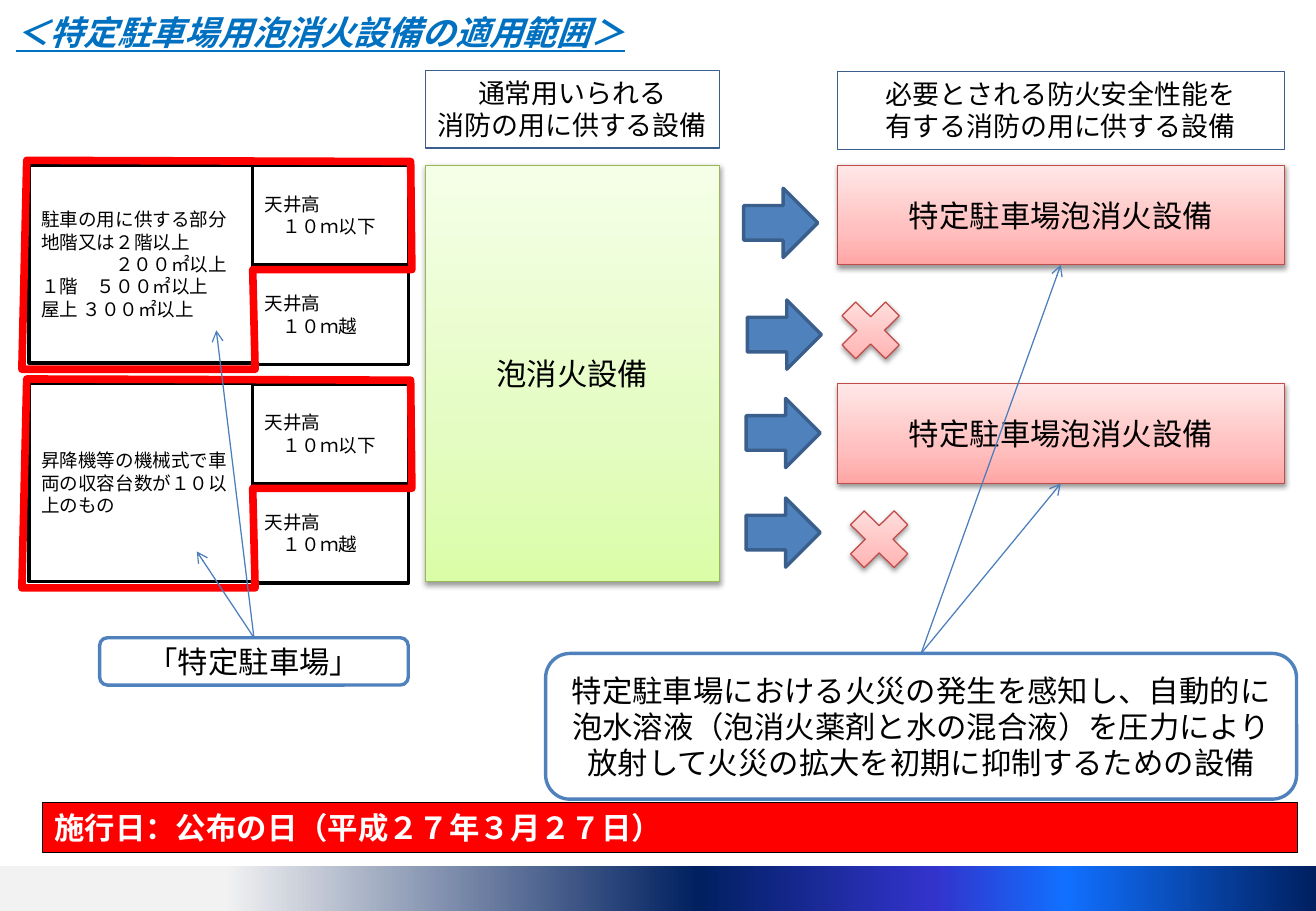
import lxml.etree
import pptx
import pptx.dml.color
import pptx.enum.shapes
import pptx.enum.text
import pptx.oxml.ns
import pptx.util

Inches = pptx.util.Inches
Pt = pptx.util.Pt
RGB = pptx.dml.color.RGBColor
Kind = pptx.enum.shapes.MSO_SHAPE
Align = pptx.enum.text.PP_ALIGN
Anchor = pptx.enum.text.MSO_ANCHOR
qn = pptx.oxml.ns.qn

BLACK = RGB(0, 0, 0)
WHITE = RGB(255, 255, 255)
RED = RGB(255, 0, 0)
TITLE = RGB(0x00, 0x70, 0xC0)
BLUE = RGB(0x4F, 0x81, 0xBD)
NAVY = RGB(0x3A, 0x5F, 0x8C)
LINK = RGB(0x4B, 0x7E, 0xBC)
OLIVE = RGB(0x98, 0xB9, 0x55)
ROSE = RGB(0xBF, 0x4C, 0x48)
GREENS = [(0, RGB(0xDA, 0xFD, 0xA7)), (35, RGB(0xE4, 0xFC, 0xC2)),
          (100, RGB(0xF5, 0xFF, 0xE7))]
PINKS = [(0, RGB(0xFF, 0xA6, 0xA5)), (35, RGB(0xFF, 0xC0, 0xBF)),
         (100, RGB(0xFF, 0xE7, 0xE7))]
BAND = [(8, RGB(0xF2, 0xF2, 0xF2)), (17, RGB(0xF2, 0xF2, 0xF2)),
        (53, RGB(0x00, 0x20, 0x60)), (71, RGB(0x33, 0x33, 0xCC)),
        (81, RGB(0x11, 0x70, 0xFF)), (100, RGB(0x00, 0x20, 0x60))]

WIDE, HIGH = 10.83, 7.5
ROW = 0.82
TOPS = (1.36, 3.16)
LIMITS = ("１０ｍ以下", "１０ｍ越")
AREAS = [("駐車の用に供する部分", 0), ("地階又は２階以上", 0), ("２００㎡以上", 0.61),
         ("１階　５００㎡以上", 0), ("屋上 ３００㎡以上", 0)]
LIFTS = [("昇降機等の機械式で車両の収容台数が１０以上のもの", 0)]
OUTLINE = [(-0.02, -0.04), (3.14, -0.03), (3.15, 0.86),
           (1.84, 0.86), (1.86, 1.68), (-0.06, 1.68)]
ARROWS = [(6.12, 1.55), (6.15, 2.47), (6.14, 3.28), (6.14, 4.1)]
CROSSES = [(6.82, 2.38), (6.89, 4.1)]


def child(parent, tag, **attrs):
    """Add a drawing element with the given attributes."""
    return lxml.etree.SubElement(parent, qn(tag), {k: str(v) for k, v in attrs.items()})


def shade(shape, stops, angle):
    """Fill a shape with a linear gradient."""
    shape.fill.gradient()
    grad = shape.element.spPr.find(qn("a:gradFill"))
    grad.clear()
    group = child(grad, "a:gsLst")
    for spot, color in stops:
        child(child(group, "a:gs", pos=spot * 1000), "a:srgbClr", val=color)
    child(grad, "a:lin", ang=angle * 60000, scaled=0)


def block(slide, kind, box, fill, line, width):
    """Add a flat preset shape."""
    shape = slide.shapes.add_shape(kind, *map(Inches, box))
    shape.shadow.inherit = False
    shape.fill.solid()
    shape.fill.fore_color.rgb = fill
    shape.line.color.rgb = line
    shape.line.width = Pt(width)
    return shape


def glossy(slide, kind, box, stops, line):
    """Add a gradient shape with a soft shadow."""
    shape = block(slide, kind, box, WHITE, line, 0.75)
    shade(shape, stops, 270)
    cast = child(shape.element.spPr.find(qn("a:effectLst")), "a:outerShdw",
                 blurRad=Pt(3.1), dist=Pt(1.6), dir=90 * 60000, rotWithShape=0)
    child(child(cast, "a:srgbClr", val=BLACK), "a:alpha", val=38000)
    return shape


def write(shape, lines, size, align=Align.CENTER, color=BLACK, face="Calibri",
          bold=False, anchor=Anchor.MIDDLE):
    """Put lines of text with left indents into a shape."""
    frame = shape.text_frame
    frame.word_wrap = True
    frame.vertical_anchor = anchor
    for i, (text, indent) in enumerate(lines):
        para = frame.add_paragraph() if i else frame.paragraphs[0]
        para.text = text
        para.alignment = align
        if indent:
            para._p.get_or_add_pPr().set("marL", str(Inches(indent)))
        para.font.size = Pt(size)
        para.font.name = face
        para.font.bold = bold
        para.font.color.rgb = color
    return frame.paragraphs[0]


def title(slide, box, text):
    """Place the underlined slide title."""
    shape = slide.shapes.title
    shape.left, shape.top, shape.width, shape.height = map(Inches, box)
    para = write(shape, [(text, 0)], 20, Align.LEFT, TITLE, "Arial", True, Anchor.TOP)
    para.font.italic = para.font.underline = True


def header(slide, box, *lines):
    """Place a column heading."""
    shape = block(slide, Kind.RECTANGLE, box, WHITE, NAVY, 0.75)
    write(shape, [(text, 0) for text in lines], 16, face="Arial", anchor=Anchor.TOP)


def zone(slide, box, lines):
    """Place one parking class, its ceiling heights and the red outline."""
    left, top, width, height = box
    cells = [((left, top, width, height), lines)]
    for i, limit in enumerate(LIMITS):
        cells.append(((left + 1.84, top + i * ROW, 1.28, ROW),
                      [("天井高", 0), (limit, 0.15)]))
    for place, words in cells:
        shape = block(slide, Kind.RECTANGLE, place, WHITE, BLACK, 2)
        write(shape, words, 11, Align.LEFT)
    points = [(Inches(left + x), Inches(top + y)) for x, y in OUTLINE]
    form = slide.shapes.build_freeform(*points[0])
    form.add_line_segments(points[1:], close=True)
    edge = form.convert_to_shape()
    edge.shadow.inherit = False
    edge.fill.background()
    edge.line.color.rgb = RED
    edge.line.width = Pt(4.5)


def system(slide, box, text, stops, line):
    """Place a named fire system."""
    write(glossy(slide, Kind.RECTANGLE, box, stops, line), [(text, 0)], 18)


def callout(slide, box, text, targets):
    """Place a rounded note with arrows from its top centre."""
    left, top, width, height = box
    shape = block(slide, Kind.ROUNDED_RECTANGLE, box, WHITE, BLUE, 2)
    write(shape, [(text, 0)], 18)
    for x, y in targets:
        link = slide.shapes.add_connector(
            pptx.enum.shapes.MSO_CONNECTOR.STRAIGHT,
            *map(Inches, (left + width / 2, top, x, y)))
        link.line.color.rgb = LINK
        link.line.width = Pt(0.75)
        props = link.element.spPr
        child(props.find(qn("a:ln")), "a:tailEnd", type="arrow")
        child(props, "a:effectLst")


def footer(slide, box, text):
    """Place the red date bar and the band at the slide foot."""
    bar = block(slide, Kind.RECTANGLE, box, RED, BLACK, 0.75)
    write(bar, [(text, 0)], 18, Align.LEFT, WHITE, "Arial", True, Anchor.TOP)
    top = box[1] + 0.52
    band = block(slide, Kind.RECTANGLE, (0, top, WIDE, HIGH - top), WHITE, WHITE, 0)
    band.line.fill.background()
    shade(band, BAND, 0)


def main():
    """Build the slide and save it."""
    deck = pptx.Presentation()
    deck.slide_width, deck.slide_height = Inches(WIDE), Inches(HIGH)
    slide = deck.slides.add_slide(deck.slide_layouts[5])
    title(slide, (0.03, 0.05, 5.97, 0.44), "＜特定駐車場用泡消火設備の適用範囲＞")
    header(slide, (3.5, 0.58, 2.42, 0.64), "通常用いられる", "消防の用に供する設備")
    header(slide, (6.89, 0.59, 3.68, 0.64),
           "必要とされる防火安全性能を", "有する消防の用に供する設備")
    system(slide, (3.5, 1.36, 2.42, 3.43), "泡消火設備", GREENS, OLIVE)
    for top, lines in zip(TOPS, (AREAS, LIFTS)):
        zone(slide, (0.24, top, 1.85, 1.63), lines)
        system(slide, (6.89, top, 3.68, ROW), "特定駐車場泡消火設備", PINKS, ROSE)
    for x, y in ARROWS:
        block(slide, Kind.RIGHT_ARROW, (x, y, 0.61, 0.57), BLUE, NAVY, 2)
    for x, y in CROSSES:
        glossy(slide, Kind.MATH_MULTIPLY, (x, y, 0.69, 0.68), PINKS, ROSE)
    callout(slide, (0.82, 5.25, 2.54, 0.39), "「特定駐車場」",
            [(1.62, 4.54), (1.78, 2.72)])
    callout(slide, (4.49, 5.38, 6.18, 1.2),
            "特定駐車場における火災の発生を感知し、自動的に泡水溶液（泡消火薬剤と水の混合液）"
            "を圧力により放射して火災の拡大を初期に抑制するための設備",
            [(8.73, top + ROW) for top in TOPS])
    footer(slide, (0.35, 6.61, 10.33, 0.41), "施行日：公布の日（平成２７年３月２７日）")
    deck.save("out.pptx")


if __name__ == "__main__":
    main()
